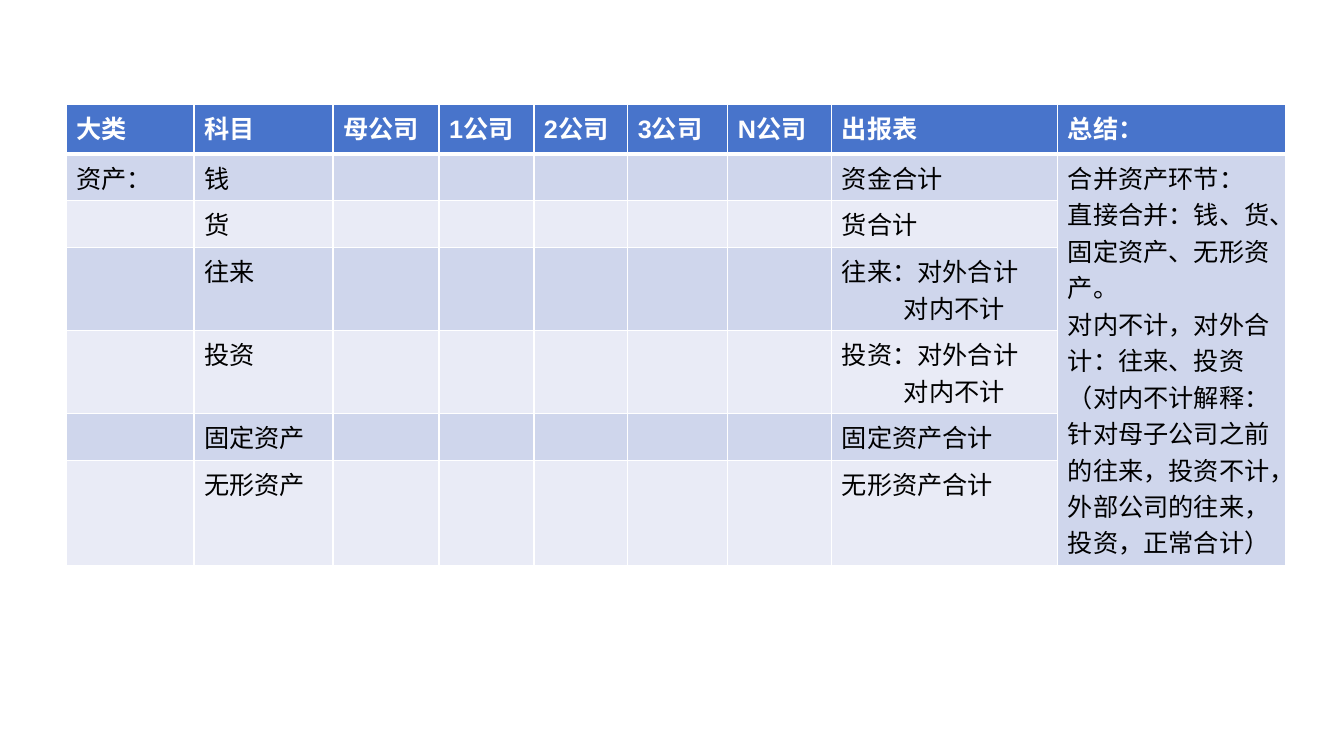
from lxml import etree
from pptx import Presentation
from pptx.dml.color import RGBColor
from pptx.oxml.ns import qn
from pptx.util import Pt

COLORS = {
    "header": "4874CB",
    "odd": "CFD6EC",
    "even": "E9EBF6",
    "border": "FFFFFF",
    "header_text": "FFFFFF",
    "text": "000000",
}
INDENT = 62


def px(n):
    return round(n * 914400 / 100.8)


def add_border(cell_props, position, side, points):
    line = etree.Element(qn(f"a:{side}"), w=str(Pt(points)))
    fill = etree.SubElement(line, qn("a:solidFill"))
    etree.SubElement(fill, qn("a:srgbClr"), val=COLORS["border"])
    cell_props.insert(position, line)


headers = ["大类", "科目", "母公司", "1公司", "2公司", "3公司", "N公司", "出报表", "总结："]
accounts = [
    ("钱", ["资金合计"]),
    ("货", ["货合计"]),
    ("往来", ["往来：对外合计", "对内不计"]),
    ("投资", ["投资：对外合计", "对内不计"]),
    ("固定资产", ["固定资产合计"]),
    ("无形资产", ["无形资产合计"]),
]
summary = [
    "合并资产环节：",
    "直接合并：钱、货、固定资产、无形资产。",
    "对内不计，对外合计：往来、投资",
    "（对内不计解释：针对母子公司之前的往来，投资不计，外部公司的往来，投资，正常合计）",
]
column_widths = [128, 139, 106, 95, 94, 100, 104, 226, 228]
row_heights = [50, 46, 47, 83, 83, 47, 105]

contents = {(0, col): [title] for col, title in enumerate(headers)}
contents[1, 0] = ["资产："]
contents[1, 8] = summary
for row, (account, report) in enumerate(accounts, 1):
    contents[row, 1] = [account]
    contents[row, 7] = report

prs = Presentation()
prs.slide_width, prs.slide_height = px(1344), px(756)
slide = prs.slides.add_slide(prs.slide_layouts[6])

report_table = slide.shapes.add_table(
    len(row_heights), len(column_widths),
    px(66), px(104), px(sum(column_widths)), px(sum(row_heights)),
).table
report_table.first_row = False
report_table.horz_banding = False
for column, width in zip(report_table.columns, column_widths):
    column.width = px(width)
for table_row, height in zip(report_table.rows, row_heights):
    table_row.height = px(height)
report_table.cell(1, 8).merge(report_table.cell(6, 8))

for row in range(len(row_heights)):
    for col in range(len(column_widths)):
        cell = report_table.cell(row, col)
        band = "header" if row == 0 else "odd" if row % 2 or col == 8 else "even"
        cell.fill.solid()
        cell.fill.fore_color.rgb = RGBColor.from_string(COLORS[band])
        cell_props = cell._tc.get_or_add_tcPr()
        widths = {"lnL": 1, "lnR": 1, "lnT": 3 if row == 1 else 1, "lnB": 3 if row == 0 else 1}
        for position, (side, points) in enumerate(widths.items()):
            add_border(cell_props, position, side, points)

        for index, text in enumerate(contents.get((row, col), [])):
            frame = cell.text_frame
            paragraph = frame.add_paragraph() if index else frame.paragraphs[0]
            if col == 7 and index:
                paragraph._p.get_or_add_pPr().set("marL", str(px(INDENT)))
            run = paragraph.add_run()
            run.text = text
            run.font.name = "Arial"
            run.font.size = Pt(18)
            run.font.bold = row == 0
            run.font.color.rgb = RGBColor.from_string(COLORS["text" if row else "header_text"])

prs.save("out.pptx")
